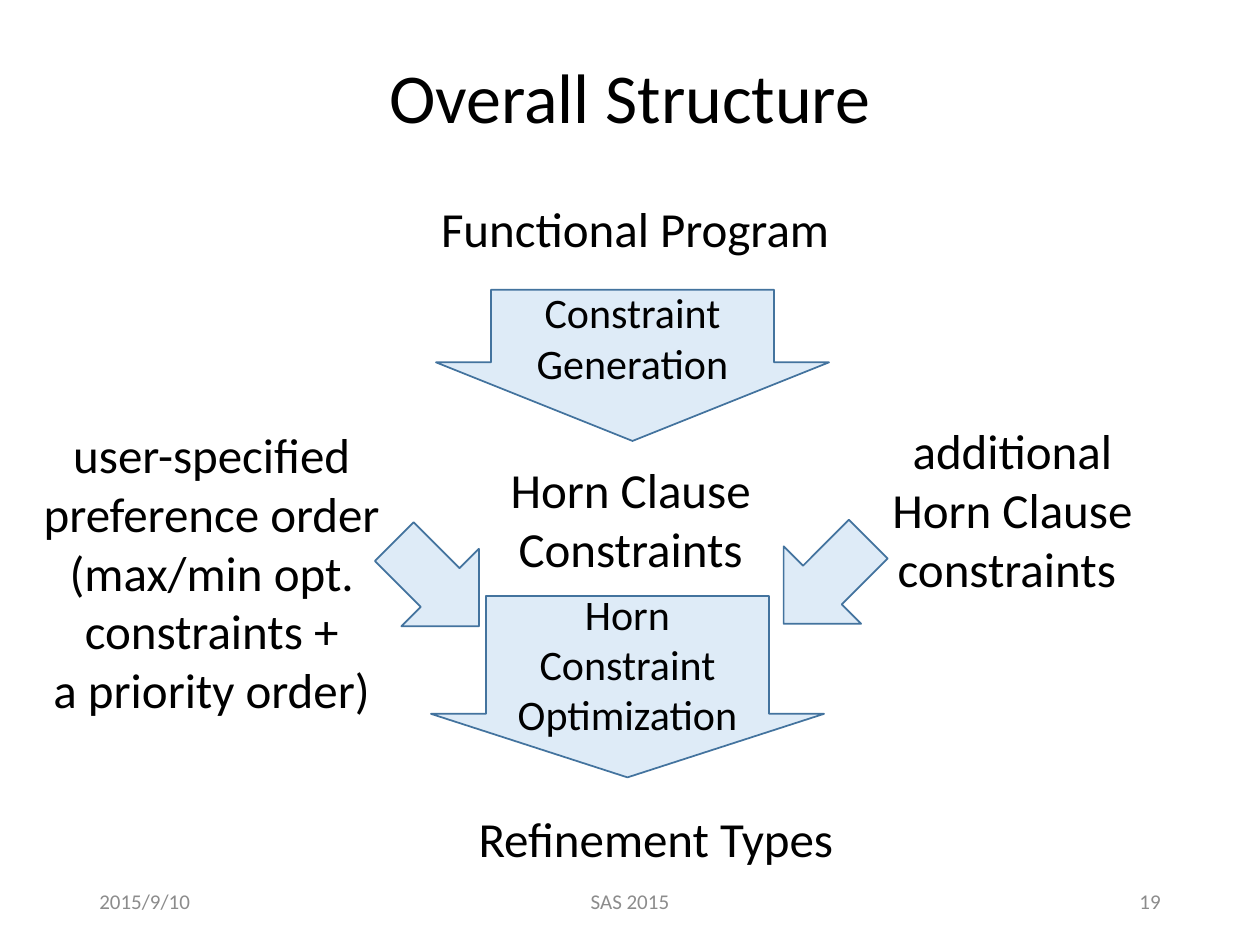
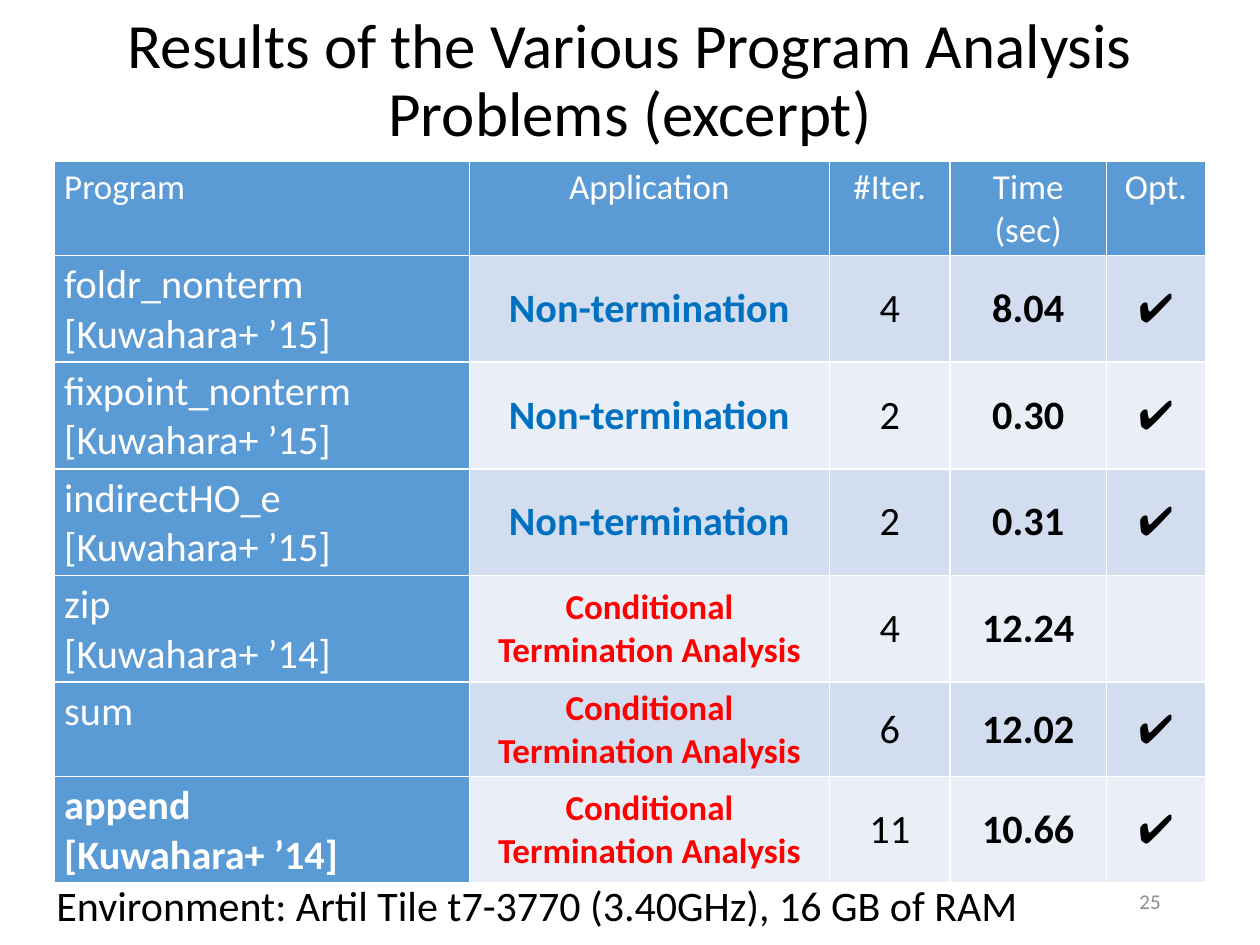
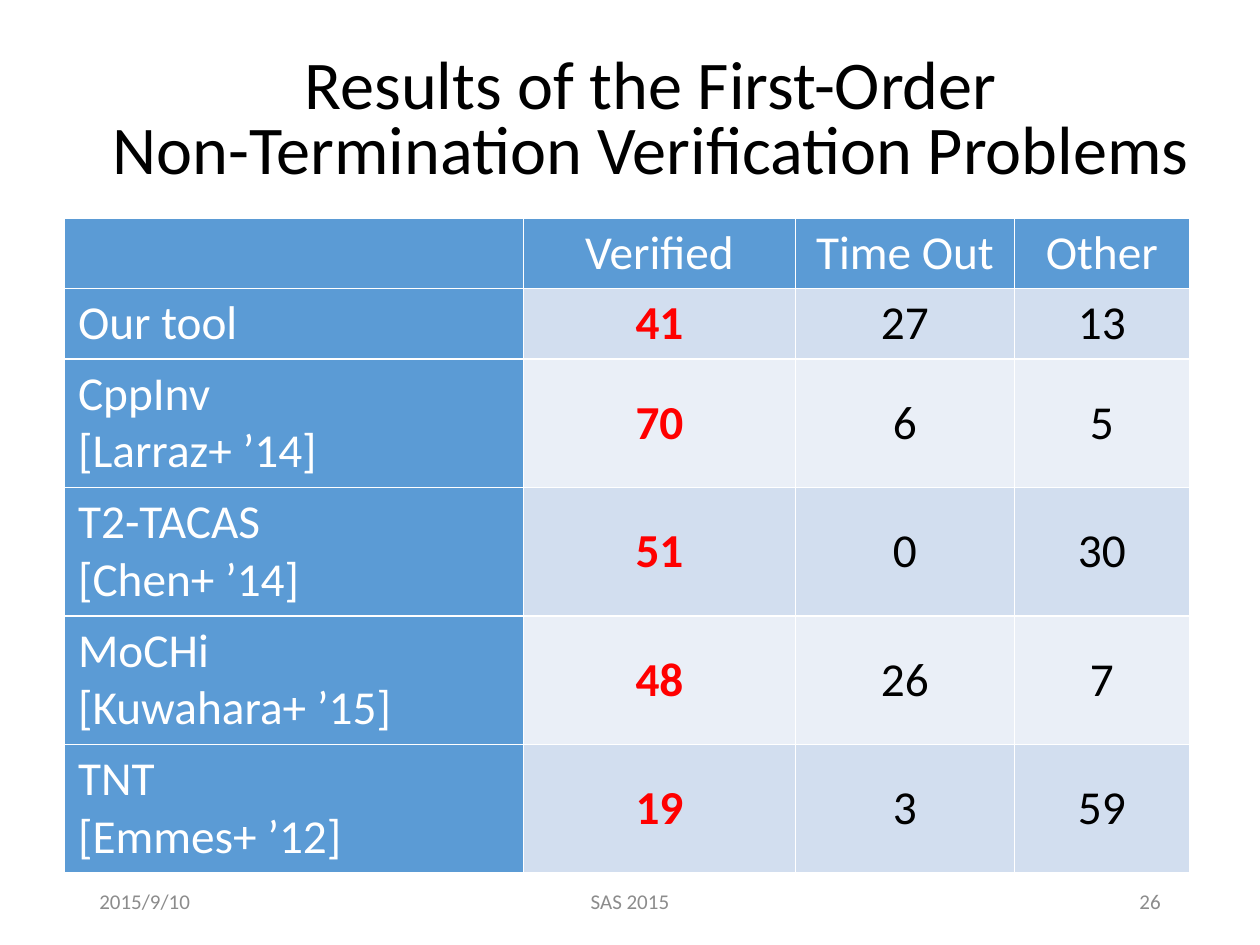
import dataclasses

import lxml.etree
import pptx
import pptx.dml.color
import pptx.enum.shapes
import pptx.enum.text
import pptx.oxml.ns
import pptx.util

RGBColor = pptx.dml.color.RGBColor
ALIGN = pptx.enum.text.PP_ALIGN
ANCHOR = pptx.enum.text.MSO_ANCHOR
SHAPE = pptx.enum.shapes.MSO_SHAPE

BLACK = RGBColor(0x00, 0x00, 0x00)
WHITE = RGBColor(0xFF, 0xFF, 0xFF)
GRAY = RGBColor(0x8C, 0x8C, 0x8C)
RED = RGBColor(0xFF, 0x00, 0x00)
BLUE = RGBColor(0x00, 0x70, 0xC0)
HEADER_BLUE = RGBColor(0x5B, 0x9B, 0xD5)
BAND_DARK = RGBColor(0xD2, 0xDE, 0xEF)
BAND_LIGHT = RGBColor(0xEA, 0xEF, 0xF7)
ARROW_FILL = RGBColor(0xDE, 0xEB, 0xF7)
ARROW_LINE = RGBColor(0x43, 0x73, 0x9E)

FONT = "Calibri"
GRID_COLUMNS, GRID_ROWS = 100, 75
SLIDE_WIDTH, SLIDE_HEIGHT = pptx.util.Inches(10), pptx.util.Inches(7.5)


@dataclasses.dataclass
class Box:
    """An area of the slide, in grid columns and rows."""
    left: float
    top: float
    width: float
    height: float

    def inner(self, left, top, width, height):
        return Box(self.left + left, self.top + top, width, height)

    def lengths(self):
        column, row = SLIDE_WIDTH / GRID_COLUMNS, SLIDE_HEIGHT / GRID_ROWS
        return [round(length) for length in (self.left * column, self.top * row,
                                             self.width * column, self.height * row)]


@dataclasses.dataclass
class Cell:
    """Table text; paragraphs is one string or a list of them."""
    paragraphs: object
    color: RGBColor = None
    bold: bool = False
    size: float = None


FOOTER = Box(6.9, 69.5, 86.2, 4)
DIAGRAM = Box(0, 15, 100, 54.5)


def write(frame, paragraphs, size, color=BLACK, align=ALIGN.CENTER, bold=False, spacing=None):
    """Fill a text frame; a newline inside a paragraph is a line break."""
    if isinstance(paragraphs, str):
        paragraphs = [paragraphs]
    for index, text in enumerate(paragraphs):
        paragraph = frame.add_paragraph() if index else frame.paragraphs[0]
        paragraph.alignment = align
        if spacing:
            paragraph.line_spacing = spacing
        for number, line in enumerate(text.split("\n")):
            if number:
                paragraph.add_line_break()
            run = paragraph.add_run()
            run.text = line
            run.font.name = FONT
            run.font.size = pptx.util.Pt(size)
            run.font.bold = bold
            run.font.color.rgb = color


def add_wrapped_text(slide, box, text, size, **style):
    frame = slide.shapes.add_textbox(*box.lengths()).text_frame
    frame.word_wrap = True
    frame.vertical_anchor = ANCHOR.MIDDLE
    write(frame, text, size, **style)


def add_label(slide, box, text, size=28, fill=None, wrap=False, **style):
    """Text whose box fits its lines."""
    label = slide.shapes.add_textbox(*box.lengths())
    if fill is not None:
        label.fill.solid()
        label.fill.fore_color.rgb = fill
    label.text_frame.word_wrap = wrap
    label.text_frame.auto_size = pptx.enum.text.MSO_AUTO_SIZE.SHAPE_TO_FIT_TEXT
    write(label.text_frame, text, size, **style)


def add_title(slide, text, size=40, left=2.55, top=2, spacing=0.9):
    add_wrapped_text(slide, Box(left, top, 94.9, 12), text, size, spacing=spacing)


def add_footer(slide, box, number, date="2015/9/10", event="SAS 2015"):
    parts = [(0, 22.5, date, ALIGN.LEFT), (26.2, 33.8, event, ALIGN.CENTER),
             (63.7, 22.5, number, ALIGN.RIGHT)]
    for left, width, text, align in parts:
        if text:
            add_wrapped_text(slide, box.inner(left, 0, width, box.height), text, 12,
                             color=GRAY, align=align)


def add_arrow(slide, kind, box, text="", rotation=0, adjustments=()):
    arrow = slide.shapes.add_shape(kind, *box.lengths())
    arrow.shadow.inherit = False
    arrow.rotation = rotation
    for index, value in enumerate(adjustments):
        arrow.adjustments[index] = value
    arrow.fill.solid()
    arrow.fill.fore_color.rgb = ARROW_FILL
    arrow.line.color.rgb = ARROW_LINE
    arrow.line.width = pptx.util.Pt(1)
    if text:
        arrow.text_frame.vertical_anchor = ANCHOR.MIDDLE
        write(arrow.text_frame, text, 24)


def add_diagram(slide, box):
    add_arrow(slide, SHAPE.DOWN_ARROW, box.inner(34.6, 8, 31.2, 12),
              "Constraint\nGeneration", adjustments=(0.72, 0.52))
    add_arrow(slide, SHAPE.DOWN_ARROW, box.inner(34.2, 32.3, 31.2, 14.4),
              "Horn Constraint\nOptimization", adjustments=(0.72, 0.35))
    for left, top, rotation in [(29.9, 27, 45), (60.8, 26.8, 135)]:
        add_arrow(slide, SHAPE.RIGHT_ARROW, box.inner(left, top, 9.5, 8.7), rotation=rotation)

    add_label(slide, box.inner(33.8, 0.3, 33.2, 5.7), "Functional Program")
    add_label(slide, box.inner(39.4, 21, 21.3, 10.4), ["Horn Clause", "Constraints"])
    add_label(slide, box.inner(2.3, 18.2, 29, 24.6),
              ["user-specified", "preference order",
               "(max/min opt.\nconstraints +\na priority order)"])
    add_label(slide, box.inner(69.7, 17.9, 21.3, 15.1),
              ["additional", "Horn Clause\nconstraints "])
    add_label(slide, box.inner(36.8, 48.7, 30.5, 5.7), "Refinement Types", fill=WHITE)


def add_borders(cell):
    properties = cell._tc.get_or_add_tcPr()
    for side in ("lnL", "lnR", "lnT", "lnB"):
        line = lxml.etree.SubElement(properties, pptx.oxml.ns.qn("a:" + side),
                                     w=str(pptx.util.Pt(1)))
        fill = lxml.etree.SubElement(line, pptx.oxml.ns.qn("a:solidFill"))
        lxml.etree.SubElement(fill, pptx.oxml.ns.qn("a:srgbClr"), val=str(WHITE))


def add_results(slide, box, column_shares, row_shares, rows, header_size, size, margins):
    """Table with a blue header row and first column, and banded values."""
    left, top, width, height = box.lengths()
    table = slide.shapes.add_table(len(rows), len(column_shares),
                                   left, top, width, height).table
    for column, share in zip(table.columns, column_shares):
        column.width = round(width * share / sum(column_shares))
    for row, share in zip(table.rows, row_shares):
        row.height = round(height * share / sum(row_shares))

    side_margin, edge_margin = map(pptx.util.Inches, margins)
    for row_index, row in enumerate(rows):
        for column_index, content in enumerate(row):
            if not isinstance(content, Cell):
                content = Cell(content)
            heading = row_index == 0 or column_index == 0
            band = BAND_DARK if row_index % 2 else BAND_LIGHT
            cell = table.cell(row_index, column_index)
            add_borders(cell)
            cell.fill.solid()
            cell.fill.fore_color.rgb = HEADER_BLUE if heading else band
            cell.margin_left = cell.margin_right = side_margin
            cell.margin_top = cell.margin_bottom = edge_margin
            cell.vertical_anchor = ANCHOR.TOP if heading else ANCHOR.MIDDLE
            if content.paragraphs:
                write(cell.text_frame, content.paragraphs,
                      content.size or (size if row_index else header_size),
                      color=content.color or (WHITE if heading else BLACK),
                      align=ALIGN.CENTER if column_index else ALIGN.LEFT,
                      bold=content.bold)


def build_structure_slide(slide):
    add_title(slide, "Overall Structure")
    add_footer(slide, FOOTER, "19")
    add_diagram(slide, DIAGRAM)


def build_analysis_slide(slide):
    add_title(slide, "Results of the Various Program Analysis Problems (excerpt)",
              size=36, top=0.5)
    add_footer(slide, FOOTER, "25", date="", event="")
    add_label(slide, Box(3.5, 69.3, 84, 5),
              "Environment: Artil Tile t7-3770 (3.40GHz), 16 GB of RAM",
              size=24, fill=WHITE, wrap=True, align=ALIGN.LEFT)
    non_termination = Cell("Non-termination", BLUE, True)
    conditional = Cell("Conditional Termination Analysis", RED, True, 20)
    results = [
        (["foldr_nonterm", "[Kuwahara+ ’15]"], non_termination, "4", "8.04", "✔"),
        (["fixpoint_nonterm", "[Kuwahara+ ’15]"], non_termination, "2", "0.30", "✔"),
        (["indirectHO_e", "[Kuwahara+ ’15]"], non_termination, "2", "0.31", "✔"),
        ("zip\n[Kuwahara+ ’14]", conditional, "4", "12.24", ""),
        ("sum", conditional, "6", "12.02", "✔"),
        (Cell("append\n[Kuwahara+ ’14]", bold=True), conditional, "11", "10.66", "✔"),
    ]
    rows = [("Program", "Application", "#Iter.", "Time (sec)", "Opt.")]
    rows += [(program, application, iterations, Cell(time, bold=True), optimal)
             for program, application, iterations, time, optimal in results]
    add_results(slide, Box(4.3, 12.8, 91.4, 57.3), (3.3, 2.86, 0.96, 1.24, 0.79),
                (0.75, 0.85, 0.85, 0.85, 0.85, 0.75, 0.85), rows, 20, 23, (0.08, 0.04))


def build_verification_slide(slide):
    results = [
        ("Our tool", "41", "27", "13"),
        ("CppInv\n[Larraz+ ’14]", "70", "6", "5"),
        (["T2-TACAS", "[Chen+ ’14]"], "51", "0", "30"),
        (["MoCHi", "[Kuwahara+ ’15]"], "48", "26", "7"),
        (["TNT", "[Emmes+ ’12]"], "19", "3", "59"),
    ]
    rows = [("", "Verified", "Time Out", "Other")]
    rows += [(tool, Cell(verified, RED, True), time_out, other)
             for tool, verified, time_out, other in results]
    add_results(slide, Box(5.1, 17.3, 89.3, 52), (3.65, 2.16, 1.74, 1.39),
                (0.56, 0.56, 1.02, 1.02, 1.02, 1.02), rows, 27, 27, (0.11, 0.05))
    add_footer(slide, FOOTER, "26")
    add_title(slide, "Results of the First-Order\nNon-Termination Verification Problems",
              size=39, left=4.2, top=3.7, spacing=0.8)


def main():
    presentation = pptx.Presentation()
    presentation.slide_width, presentation.slide_height = SLIDE_WIDTH, SLIDE_HEIGHT
    blank = presentation.slide_layouts[6]
    for build in (build_structure_slide, build_analysis_slide, build_verification_slide):
        build(presentation.slides.add_slide(blank))
    presentation.save("out.pptx")


if __name__ == "__main__":
    main()
